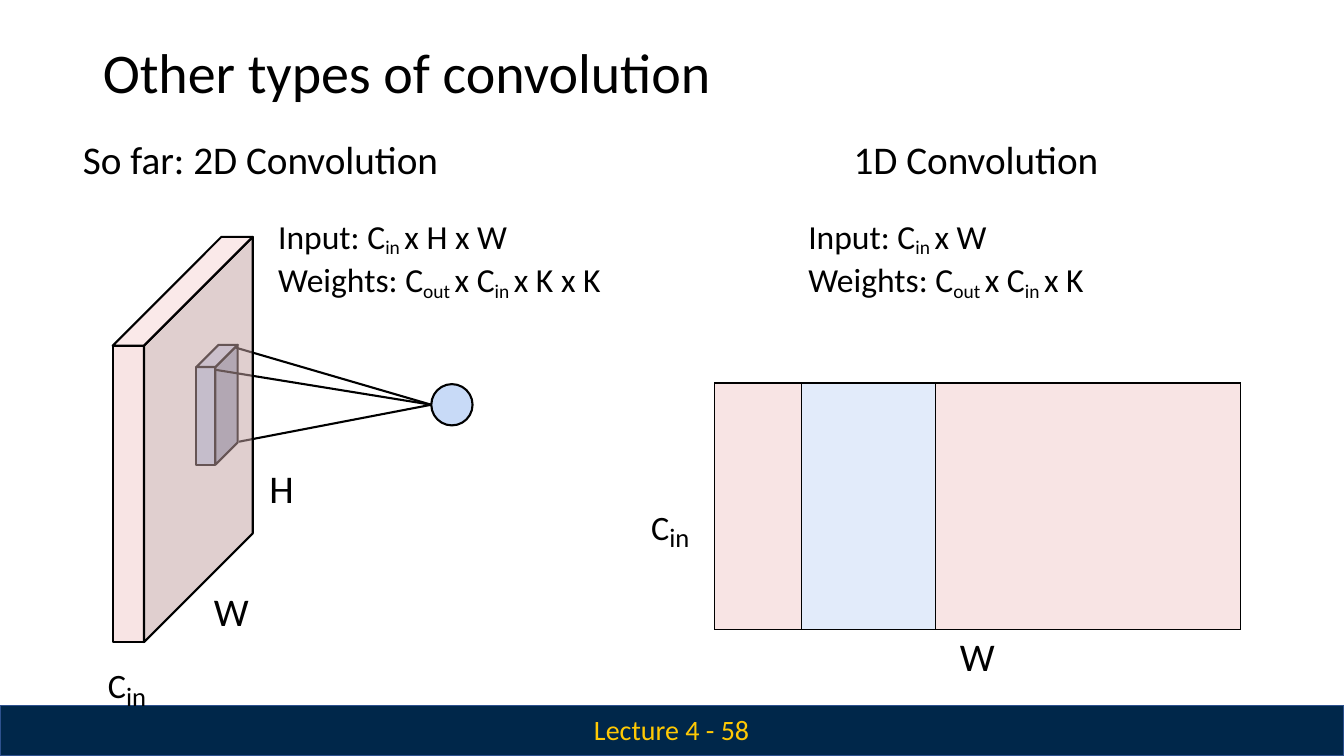
"""Builds a lecture slide comparing 2D convolution with 1D convolution."""
from lxml import etree
from pptx import Presentation
from pptx import util as u
from pptx.dml.color import RGBColor
from pptx.enum import shapes, text
from pptx.oxml import ns

BLACK = RGBColor(0x00, 0x00, 0x00)
NAVY = RGBColor(0x00, 0x27, 0x4A)
NAVY_EDGE = RGBColor(0x2D, 0x51, 0x8E)
GOLD = RGBColor(0xFF, 0xC9, 0x04)
BLUE = RGBColor(0xC8, 0xDA, 0xF7)
BLUE_SIDE = RGBColor(0xA0, 0xAD, 0xC6)
BLUE_TOP = RGBColor(0xD3, 0xDF, 0xF8)
PINK = RGBColor(0xF3, 0xCC, 0xCC)
PINK_SIDE = RGBColor(0xC4, 0xA3, 0xA3)
PINK_TOP = RGBColor(0xF6, 0xD5, 0xD5)


def paint(fill, properties, colour, opacity=100):
    fill.solid()
    fill.fore_color.rgb = colour
    if opacity < 100:
        tint = properties.find(".//" + ns.qn("a:srgbClr"))
        etree.SubElement(tint, ns.qn("a:alpha"), val=str(opacity * 1000))


def write(frame, paragraphs, colour=BLACK):
    frame.word_wrap = True
    frame.auto_size = text.MSO_AUTO_SIZE.SHAPE_TO_FIT_TEXT
    frame.vertical_anchor = text.MSO_ANCHOR.TOP
    frame.margin_left = frame.margin_right = frame.margin_bottom = 0
    frame.margin_top = u.Cm(0.03)
    for number, (indent, before, runs) in enumerate(paragraphs):
        paragraph = frame.add_paragraph() if number else frame.paragraphs[0]
        paragraph.alignment = text.PP_ALIGN.LEFT
        paragraph.space_before = u.Pt(before)
        properties = paragraph._p.get_or_add_pPr()
        properties.set("marL", str(u.Cm(indent)))
        properties.set("indent", "0")
        for words, size, baseline in runs:
            if words == "\n":
                paragraph.add_line_break()
                continue
            run = paragraph.add_run()
            run.text = words
            run.font.name = "Calibri"
            run.font.size = u.Pt(size)
            run.font.color.rgb = colour
            if baseline:
                run.font._element.set("baseline", str(baseline * 1000))


deck = Presentation()
deck.slide_width, deck.slide_height = u.Cm(33.87), u.Cm(19.05)
slide = deck.slides.add_slide(deck.slide_layouts[5])

footer_bar = slide.shapes.add_shape(
    shapes.MSO_SHAPE.RECTANGLE, 0, u.Cm(17.78), deck.slide_width, u.Cm(1.27))
footer_bar.shadow.inherit = False
paint(footer_bar.fill, footer_bar._element.spPr, NAVY)
footer_bar.line.color.rgb = NAVY_EDGE
footer_bar.line.width = u.Pt(1)

heading = slide.shapes.title
heading.left, heading.top = u.Cm(2.16), u.Cm(0.91)
heading.width, heading.height = u.Cm(29.57), u.Cm(1.93)
write(heading.text_frame, [(0.43, 1, [("Other types of convolution", 40, 0)])])

diagram = slide.shapes.add_group_shape().shapes
pieces = []
cuboids = [
    (4.95, 9.25, 0.48, 2.46, 0.56, (BLUE, BLUE_SIDE, BLUE_TOP), 100),
    (2.84, 8.71, 0.79, 7.47, 2.74, (PINK, PINK_SIDE, PINK_TOP), 52),
]
for left, top, thickness, height, depth, colours, opacity in cuboids:
    right, bottom = left + thickness, top + height
    back_left, back_right, back_top = left + depth, right + depth, top - depth
    faces = [
        [(left, top), (right, top), (right, bottom), (left, bottom)],
        [(right, top), (back_right, back_top),
         (back_right, bottom - depth), (right, bottom)],
        [(left, top), (back_left, back_top), (back_right, back_top), (right, top)],
    ]
    for corners, colour in zip(faces, colours):
        points = [(u.Cm(x), u.Cm(y)) for x, y in corners]
        outline = diagram.build_freeform(*points[0])
        outline.add_line_segments(points[1:], close=True)
        face = outline.convert_to_shape()
        paint(face.fill, face._element.spPr, colour, opacity)
        pieces.append(face)
    if opacity == 100:
        neuron = diagram.add_shape(
            shapes.MSO_SHAPE.OVAL, u.Cm(10.87), u.Cm(9.68), u.Cm(1.04), u.Cm(1.04))
        paint(neuron.fill, neuron._element.spPr, BLUE)
        pieces.append(neuron)
        for x, y in [(5.44, 9.32), (5.94, 8.76), (6.02, 11.13)]:
            ray = diagram.add_connector(
                shapes.MSO_CONNECTOR.STRAIGHT, u.Cm(x), u.Cm(y), u.Cm(10.87), u.Cm(10.2))
            pieces.append(ray)
for piece in pieces:
    piece.line.color.rgb = BLACK
    piece.line.width = u.Pt(1.5)
    etree.SubElement(piece._element.spPr, ns.qn("a:effectLst"))

columns = [
    (20.27, 7.52, 1.24, 0.1, "1D Convolution", "x W", "x K"),
    (2.01, 13.49, 0.08, 5.0, "So far: 2D Convolution", "x H x W", "x K x K"),
]
for left, width, title_indent, indent, topic, extent, kernel in columns:
    summary = slide.shapes.add_textbox(u.Cm(left), u.Cm(3.38), u.Cm(width), u.Cm(4.14))
    shapes_of_tensors = [
        ("Input: C", 24, 0), ("in ", 24, -17), (extent, 24, 0), ("\n", 24, 0),
        ("Weights: C", 24, 0), ("out ", 24, -17), ("x C", 24, 0),
        ("in ", 24, -17), (kernel, 24, 0),
    ]
    write(summary.text_frame, [(title_indent, 1, [(topic, 28, 0)]),
                               (indent, 23.4, shapes_of_tensors)])
    summary.text_frame.paragraphs[1].line_spacing = 1.01

signal = slide.shapes.add_table(
    1, 3, u.Cm(18.01), u.Cm(9.65), u.Cm(13.26), u.Cm(6.22)).table
signal.first_row = signal.horz_banding = False
for index, (width, colour) in enumerate([(2.18, PINK), (3.38, BLUE), (7.7, PINK)]):
    signal.columns[index].width = u.Cm(width)
    cell = signal.cell(0, index)
    properties = cell._tc.get_or_add_tcPr()
    paint(cell.fill, properties, colour, 52)
    for position, side in enumerate(("lnL", "lnR", "lnT", "lnB")):
        border = etree.Element(ns.qn("a:" + side), w=str(u.Pt(1)))
        ink = etree.SubElement(border, ns.qn("a:solidFill"))
        etree.SubElement(ink, ns.qn("a:srgbClr"), val=str(BLACK))
        properties.insert(position, border)

channels = [("C", 42, 12), ("in", 19, 0)]
axis_labels = [
    (2.62, 16.28, 1.24, 0.1, channels),
    (5.36, 14.78, 0.94, 0.03, [("W", 28, 0)]),
    (6.76, 11.68, 0.69, 0.03, [("H", 28, 0)]),
    (16.31, 12.29, 1.24, 0.1, channels),
    (24.16, 15.9, 0.94, 0.03, [("W", 28, 0)]),
]
for left, top, width, indent, runs in axis_labels:
    axis = slide.shapes.add_textbox(u.Cm(left), u.Cm(top), u.Cm(width), u.Cm(1.24))
    write(axis.text_frame, [(indent, 1, runs)])

lecture = slide.shapes.add_textbox(u.Cm(14.94), u.Cm(17.96), u.Cm(3.99), u.Cm(0.86))
write(lecture.text_frame, [(0.03, 0, [("Lecture 4 - 58", 20, 0)])], GOLD)
lecture.text_frame.margin_top = 0

deck.save("out.pptx")
